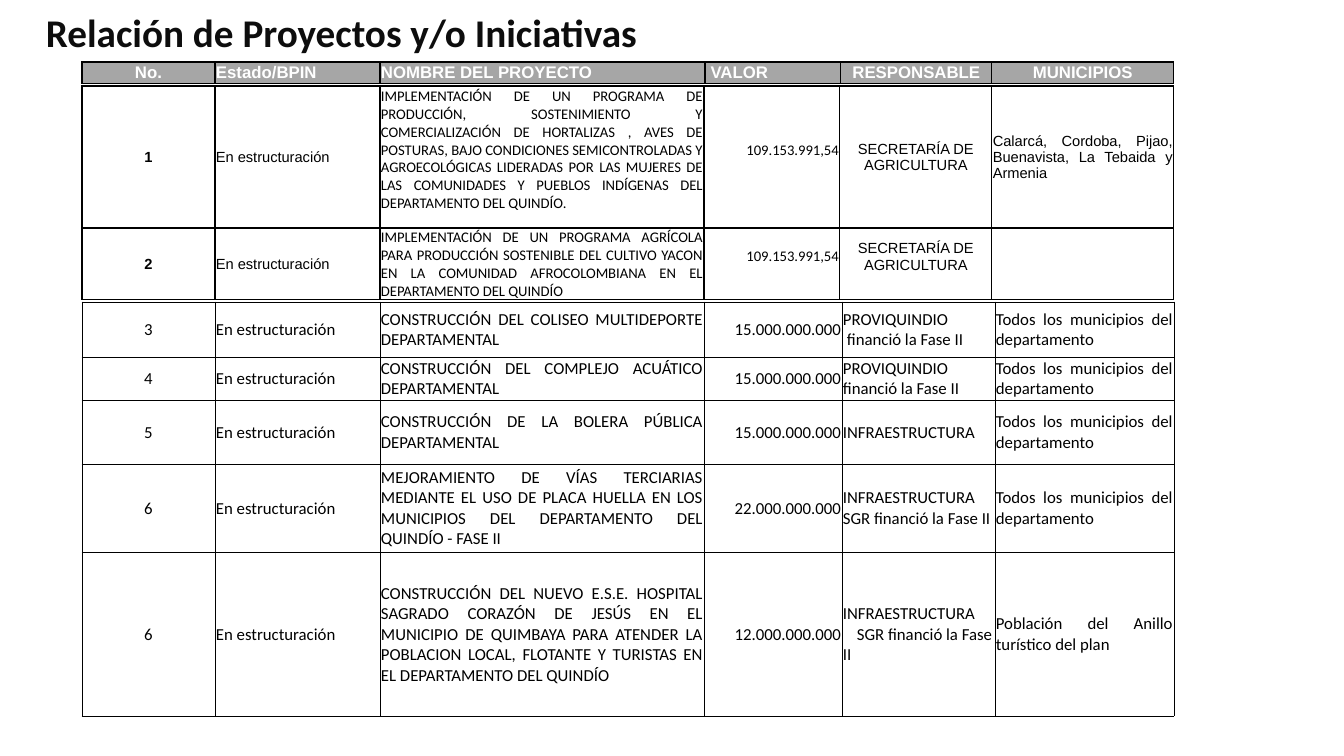
from dataclasses import dataclass

from lxml.etree import SubElement
from pptx import Presentation
from pptx.dml.color import RGBColor
from pptx.enum.text import MSO_ANCHOR as Anchor, PP_ALIGN as Align
from pptx.oxml.ns import qn
from pptx.util import Emu, Pt

EMU_PER_PX = 914400 / 100.8


@dataclass(frozen=True)
class Theme:
    title: str = "0D0D0D"
    ink: str = "000000"
    white: str = "FFFFFF"
    header: str = "A6A6A6"
    sans: str = "Calibri"
    plain: str = "Arial"
    title_size: float = 28
    body_size: float = 12
    small_size: float = 10.5
    thick: float = 1
    thin: float = 0.5


THEME = Theme()
TABLE_LEFT = 82
STATUS = "En estructuración"
ALL_TOWNS = "Todos los municipios del departamento"
FARMING = "SECRETARÍA DE AGRICULTURA"
CENTER, LEFT, RIGHT, JUSTIFY = Align.CENTER, Align.LEFT, Align.RIGHT, Align.JUSTIFY

HEADERS = [["No.", "Estado/BPIN", "NOMBRE DEL PROYECTO", " VALOR", "RESPONSABLE", "MUNICIPIOS"]]
FARM_PROJECTS = [
    ["1", STATUS,
     "IMPLEMENTACIÓN DE UN PROGRAMA DE PRODUCCIÓN, SOSTENIMIENTO Y COMERCIALIZACIÓN "
     "DE HORTALIZAS , AVES DE POSTURAS, BAJO CONDICIONES SEMICONTROLADAS Y "
     "AGROECOLÓGICAS LIDERADAS POR LAS MUJERES DE LAS COMUNIDADES Y PUEBLOS "
     "INDÍGENAS DEL DEPARTAMENTO DEL QUINDÍO.",
     "109.153.991,54", FARMING, "Calarcá, Cordoba, Pijao, Buenavista, La Tebaida y Armenia"],
    ["2", STATUS,
     "IMPLEMENTACIÓN DE UN PROGRAMA AGRÍCOLA PARA PRODUCCIÓN SOSTENIBLE DEL CULTIVO "
     "YACON EN LA COMUNIDAD AFROCOLOMBIANA EN EL DEPARTAMENTO DEL QUINDÍO",
     "109.153.991,54", FARMING, ""],
]
WORKS_PROJECTS = [
    ["3", STATUS, "CONSTRUCCIÓN DEL COLISEO MULTIDEPORTE DEPARTAMENTAL",
     "15.000.000.000", "PROVIQUINDIO\nfinanció la Fase II", ALL_TOWNS],
    ["4", STATUS, "CONSTRUCCIÓN DEL COMPLEJO ACUÁTICO DEPARTAMENTAL",
     "15.000.000.000", "PROVIQUINDIO\nfinanció la Fase II", ALL_TOWNS],
    ["5", STATUS, "CONSTRUCCIÓN DE LA BOLERA PÚBLICA DEPARTAMENTAL",
     "15.000.000.000", "INFRAESTRUCTURA", ALL_TOWNS],
    ["6", STATUS,
     "MEJORAMIENTO DE VÍAS TERCIARIAS MEDIANTE EL USO DE PLACA HUELLA EN LOS "
     "MUNICIPIOS DEL DEPARTAMENTO DEL QUINDÍO - FASE II",
     "22.000.000.000", "INFRAESTRUCTURA SGR financió la Fase II", ALL_TOWNS],
    ["6", STATUS,
     "CONSTRUCCIÓN DEL NUEVO E.S.E. HOSPITAL SAGRADO CORAZÓN DE JESÚS EN EL "
     "MUNICIPIO DE QUIMBAYA PARA ATENDER LA POBLACION LOCAL, FLOTANTE Y TURISTAS "
     "EN EL DEPARTAMENTO DEL QUINDÍO",
     "12.000.000.000", "INFRAESTRUCTURA\nSGR financió la Fase II",
     "Población del Anillo turístico del plan"],
]


def px(length):
    return Emu(round(length * EMU_PER_PX))


def set_font(paragraph, name, size, color, bold=False):
    font = paragraph.font
    font.name, font.size, font.bold = name, Pt(size), bold
    font.color.rgb = RGBColor.from_string(color)


def set_borders(cell, width, bottom_width):
    properties = cell._tc.get_or_add_tcPr()
    for side in "LRTB":
        points = bottom_width if side == "B" else width
        line = SubElement(properties, qn(f"a:ln{side}"), w=str(Pt(points)))
        fill = SubElement(line, qn("a:solidFill"))
        SubElement(fill, qn("a:srgbClr"), val=THEME.ink)


def fill_cell(cell, text, align, font, fill):
    cell.margin_left = cell.margin_right = cell.margin_top = px(1)
    cell.margin_bottom = 0
    cell.vertical_anchor = Anchor.MIDDLE
    cell.fill.solid()
    cell.fill.fore_color.rgb = RGBColor.from_string(fill)
    cell.text = text
    for paragraph in cell.text_frame.paragraphs:
        paragraph.alignment = align
        set_font(paragraph, *font)


def add_grid(slide, top, columns, heights, rows, aligns, fonts,
             fill=THEME.white, border=THEME.thick, last_border=THEME.thin):
    shape = slide.shapes.add_table(len(rows), len(columns), px(TABLE_LEFT), px(top),
                                   px(sum(columns)), px(sum(heights)))
    table = shape.table
    table.first_row = table.horz_banding = False
    for column, width in zip(table.columns, columns):
        column.width = px(width)
    for row, height in zip(table.rows, heights):
        row.height = px(height)
    for r, texts in enumerate(rows):
        bottom = last_border if r == len(rows) - 1 else border
        for c, text in enumerate(texts):
            cell = table.cell(r, c)
            set_borders(cell, border, bottom)
            fill_cell(cell, text, aligns[c], fonts[c], fill)
    return table


def add_title(slide, text):
    box = slide.shapes.add_textbox(px(36), px(17), px(822), px(46))
    box.text_frame.word_wrap = True
    paragraph = box.text_frame.paragraphs[0]
    paragraph.text = text
    paragraph.line_spacing = Pt(24)
    set_font(paragraph, THEME.sans, THEME.title_size, THEME.title, True)


def main():
    presentation = Presentation()
    presentation.slide_width, presentation.slide_height = px(1344), px(756)
    slide = presentation.slides.add_slide(presentation.slide_layouts[6])
    add_title(slide, "Relación de Proyectos y/o Iniciativas")

    # Infrastructure projects
    body = (THEME.sans, THEME.body_size, THEME.ink)
    works = add_grid(slide, 302, [133, 165, 324, 138, 153, 179], [55, 43, 64, 88, 164],
                     WORKS_PROJECTS, [CENTER, LEFT, JUSTIFY, RIGHT, LEFT, JUSTIFY],
                     [body] * 6, border=THEME.thin)
    # First-line indents of the second lines under RESPONSABLE
    for row, indent in ((0, 4), (4, 14)):
        second_line = works.cell(row, 4).text_frame.paragraphs[1]
        second_line._p.get_or_add_pPr().set("indent", str(px(indent)))

    # Header band
    heading = (THEME.plain, THEME.body_size, THEME.white, True)
    add_grid(slide, 62, [133, 165, 325, 136, 151, 182], [21], HEADERS,
             [CENTER, LEFT, JUSTIFY, LEFT, CENTER, CENTER], [heading] * 6, THEME.header)

    # Farming projects
    plain = (THEME.plain, THEME.small_size, THEME.ink)
    sans = (THEME.sans, THEME.small_size, THEME.ink)
    farming = add_grid(slide, 86, [133, 165, 324, 136, 152, 182], [142, 71], FARM_PROJECTS,
                       [CENTER, LEFT, JUSTIFY, RIGHT, CENTER, JUSTIFY],
                       [(*plain, True), plain, sans, sans, plain, plain])
    # Cells whose text sits above the middle
    for row, column in ((0, 2), (0, 3), (1, 3), (1, 4)):
        farming.cell(row, column).margin_bottom = px(15)

    presentation.save("out.pptx")


if __name__ == "__main__":
    main()
